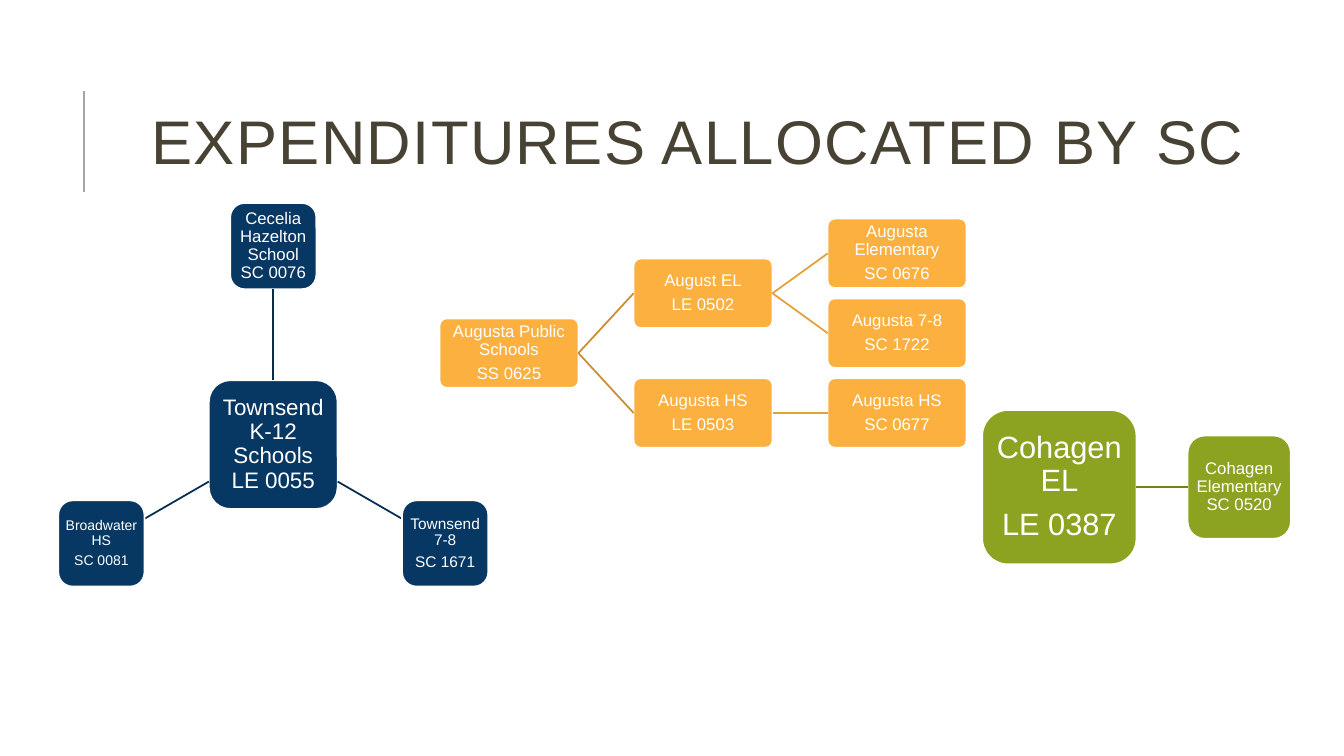
"""Build a slide of three school trees showing expenditures allocated by SC."""
from lxml.etree import SubElement
from pptx import Presentation
from pptx.dml.color import RGBColor
from pptx.enum.shapes import MSO_CONNECTOR, MSO_SHAPE
from pptx.enum.text import MSO_ANCHOR, MSO_AUTO_SIZE, PP_ALIGN
from pptx.oxml.ns import qn
from pptx.util import Pt

COLORS = {
    "title": "474233", "rule": "A6A6A6", "white": "FFFFFF",
    "navy": "073763", "navy_line": "062C4F",
    "green": "8CA221", "green_line": "70821A",
    "orange": "FBB040", "trunk_line": "C98D33", "branch_line": "E4A03A",
}
FONT = "Arial"
TOP, LEFT, BOTTOM, RIGHT = range(4)
TREE_LEFT, TREE_TOP = 314, 156.2
COLUMN_STEP, ROW_STEP = 138.6, 57
TREE_WIDTH, TREE_HEIGHT = 99.2, 49.6


def color(name):
    return RGBColor.from_string(COLORS[name])


def add_span(para, text, size, color_name):
    span = para.add_run()
    span.text = text
    span.font.name = FONT
    span.font.size = Pt(size)
    span.font.color.rgb = color(color_name)
    return span


def add_title(page, text):
    title = page.shapes.title
    title.left, title.top = Pt(100.8), Pt(46.1)
    title.width, title.height = Pt(802.1), Pt(118.1)
    frame = title.text_frame
    frame.word_wrap = True
    frame.auto_size = MSO_AUTO_SIZE.NONE
    frame.vertical_anchor = MSO_ANCHOR.MIDDLE
    para = frame.paragraphs[0]
    para.alignment = PP_ALIGN.LEFT
    para.line_spacing = 0.8
    span = add_span(para, text, 44, "title")
    span._r.get_or_add_rPr().set("spc", "100")


def add_node(page, left, top, width, height, fill, lines, size, inset, corner=0.1667):
    box = page.shapes.add_shape(
        MSO_SHAPE.ROUNDED_RECTANGLE, Pt(left), Pt(top), Pt(width), Pt(height))
    box.adjustments[0] = corner
    box.shadow.inherit = False
    box.fill.solid()
    box.fill.fore_color.rgb = color(fill)
    box.line.color.rgb = color("white")
    box.line.width = Pt(1.25)
    frame = box.text_frame
    frame.word_wrap = True
    frame.vertical_anchor = MSO_ANCHOR.MIDDLE
    frame.margin_left = frame.margin_right = Pt(inset)
    frame.margin_top = frame.margin_bottom = Pt(inset)
    for index, line in enumerate(lines):
        para = frame.add_paragraph() if index else frame.paragraphs[0]
        para.alignment = PP_ALIGN.CENTER
        para.line_spacing = 0.9
        para.space_after = Pt(size * 0.35)
        add_span(para, line, size, "white")
    return box


def add_line(page, color_name, start=(0, 0), end=(0, 0), width=1.25):
    line = page.shapes.add_connector(
        MSO_CONNECTOR.STRAIGHT, *(Pt(value) for value in (*start, *end)))
    line.line.color.rgb = color(color_name)
    line.line.width = Pt(width)
    SubElement(line._element.spPr, qn("a:effectLst"))
    return line


def join(page, parent, parent_side, child, child_side, color_name):
    line = add_line(page, color_name)
    line.begin_connect(parent, parent_side)
    line.end_connect(child, child_side)


def add_townsend(page):
    side = 61.6
    hub = add_node(page, 149.2, 271.6, 92, 92, "navy",
                   ["Townsend K-12 Schools LE 0055"], 16, 2.9)
    school = add_node(page, 164.4, 145, side, side, "navy",
                      ["Cecelia Hazelton School SC 0076"], 12, 2)
    join(page, hub, TOP, school, BOTTOM, "navy_line")
    for left, lines, size, start, end in (
        (287.2, ["Townsend 7-8", "SC 1671"], 11, 241.2, 287.2),
        (41.6, ["Broadwater HS", "SC 0081"], 10, 149.2, 103.2),
    ):
        add_line(page, "navy_line", (start, 344), (end, 370.6))
        add_node(page, left, 357.4, side, side, "navy", lines, size, 2)


def add_cohagen(page):
    hub = add_node(page, 701.6, 292.9, 110.2, 110.2, "green",
                   ["Cohagen EL", "LE 0387"], 22, 4)
    school = add_node(page, 848.3, 311.1, 73.8, 73.8, "green",
                      ["Cohagen Elementary SC 0520"], 12, 2)
    join(page, hub, RIGHT, school, LEFT, "green_line")


def add_augusta(page):
    def node(column, row, *lines):
        return add_node(page, TREE_LEFT + column * COLUMN_STEP,
                        TREE_TOP + row * ROW_STEP, TREE_WIDTH, TREE_HEIGHT,
                        "orange", lines, 12, 0.8, 0.1)

    root = node(0, 1.25, "Augusta Public Schools", "SS 0625")
    branches = (
        (0.5, ("August EL", "LE 0502"),
         ((0, ("Augusta Elementary", "SC 0676")), (1, ("Augusta 7-8", "SC 1722")))),
        (2, ("Augusta HS", "LE 0503"), ((2, ("Augusta HS", "SC 0677")),)),
    )
    for row, lines, schools in branches:
        branch = node(1, row, *lines)
        join(page, root, RIGHT, branch, LEFT, "trunk_line")
        for school_row, school_lines in schools:
            school = node(2, school_row, *school_lines)
            join(page, branch, RIGHT, school, LEFT, "branch_line")


def main():
    deck = Presentation()
    deck.slide_width, deck.slide_height = Pt(960), Pt(540)
    page = deck.slides.add_slide(deck.slide_layouts[5])
    add_line(page, "rule", (60, 136.8), (60, 64.8), 1.75)
    add_title(page, "EXPENDITURES ALLOCATED BY SC")
    add_townsend(page)
    add_cohagen(page)
    add_augusta(page)
    deck.save("out.pptx")


if __name__ == "__main__":
    main()
